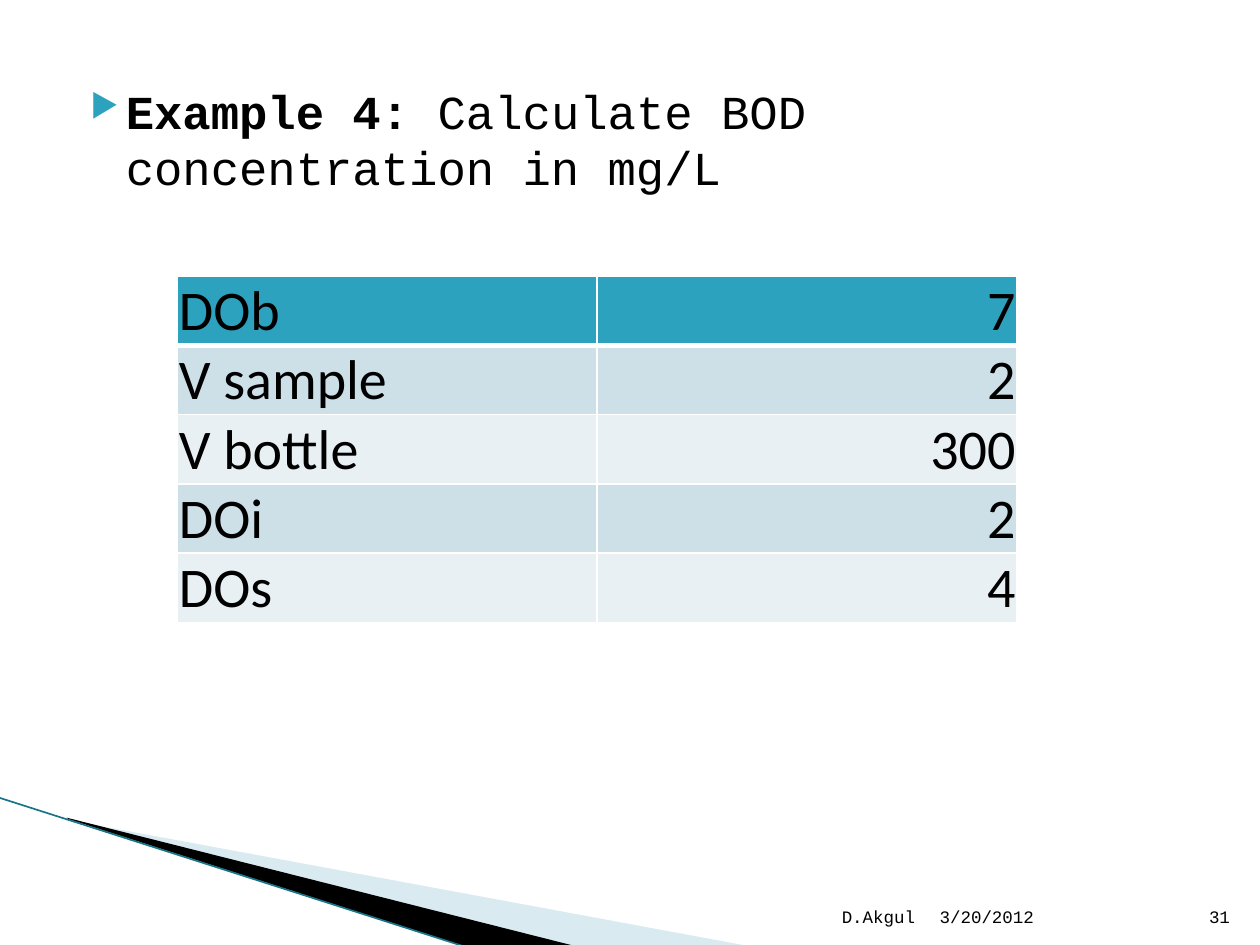
from dataclasses import dataclass

from lxml.etree import SubElement
from pptx import Presentation
from pptx.dml.color import RGBColor as Rgb
from pptx.enum.shapes import MSO_CONNECTOR as Connector
from pptx.enum.text import MSO_ANCHOR as Anchor, PP_ALIGN as Align
from pptx.oxml.ns import qn
from pptx.slide import Slide
from pptx.table import _Cell as Cell
from pptx.text.text import _Paragraph as Paragraph
from pptx.util import Inches, Pt


@dataclass(frozen=True)
class Theme:
    ink: str = "000000"
    paper: str = "FFFFFF"
    accent: str = "2DA2BF"
    edge: str = "1A7488"
    pale: str = "A0CBDC"
    bands: tuple[str, str] = ("CDE0E8", "E8F0F4")
    mono: str = "Courier New"
    sans: str = "Calibri"
    heading_size: float = 27
    table_size: float = 32
    footer_size: float = 10


@dataclass(frozen=True)
class Wedge:
    points: tuple[tuple[float, float], ...]
    color: str
    opacity: int = 100


@dataclass(frozen=True)
class FooterItem:
    text: str
    left: float
    width: float
    align: Align


THEME = Theme()

WEDGES = (
    Wedge(((0.55, 6.51), (5.95, 7.51), (4.56, 7.51), (0.55, 6.5)), THEME.pale, 40),
    Wedge(((0.53, 6.49), (4.57, 7.51), (3.72, 7.52), (0.54, 6.5)), THEME.ink),
)

FOOTER = (
    FooterItem("3/20/2012", 7.36, 2.1, Align.LEFT),
    FooterItem("D.Akgul", 4.79, 2.57, Align.RIGHT),
    FooterItem("31", 9.46, 0.4, Align.RIGHT),
)

MEASUREMENTS = (
    ("DOb", "7"),
    ("V sample", "2"),
    ("V bottle", "300"),
    ("DOi", "2"),
    ("DOs", "4"),
)


def set_font(paragraph: Paragraph, family: str, size: float) -> None:
    paragraph.font.name = family
    paragraph.font.size = Pt(size)
    paragraph.font.color.rgb = Rgb.from_string(THEME.ink)


def draw_wedge(slide: Slide, wedge: Wedge) -> None:
    corners = [(Inches(x), Inches(y)) for x, y in wedge.points]
    builder = slide.shapes.build_freeform(*corners[0])
    builder.add_line_segments(corners[1:])
    shape = builder.convert_to_shape()
    shape.shadow.inherit = False
    shape.line.fill.background()
    shape.fill.solid()
    shape.fill.fore_color.rgb = Rgb.from_string(wedge.color)
    if wedge.opacity < 100:
        color = shape.fill._xPr.find(f"{qn('a:solidFill')}/{qn('a:srgbClr')}")
        SubElement(color, qn("a:alpha"), val=str(wedge.opacity * 1000))


def draw_edge(slide: Slide) -> None:
    edge = slide.shapes.add_connector(
        Connector.STRAIGHT, Inches(-0.01), Inches(6.33), Inches(3.71), Inches(7.52)
    )
    edge.line.color.rgb = Rgb.from_string(THEME.edge)
    edge.line.width = Pt(0.95)
    SubElement(edge._element.spPr, qn("a:effectLst"))


def add_bullet(paragraph: Paragraph) -> None:
    properties = paragraph._p.get_or_add_pPr()
    properties.set("marL", str(Inches(0.4)))
    properties.set("indent", str(Inches(-0.28)))
    color = SubElement(properties, qn("a:buClr"))
    SubElement(color, qn("a:srgbClr"), val=THEME.accent)
    SubElement(properties, qn("a:buSzPct"), val="68000")
    SubElement(properties, qn("a:buChar"), char="▶")


def draw_heading(slide: Slide) -> None:
    heading = slide.shapes.add_textbox(Inches(0.5), Inches(0.6), Inches(9), Inches(5.97))
    heading.text_frame.word_wrap = True
    paragraph = heading.text_frame.paragraphs[0]
    add_bullet(paragraph)
    set_font(paragraph, THEME.mono, THEME.heading_size)
    label = paragraph.add_run()
    label.text = "Example 4: "
    label.font.bold = True
    paragraph.add_run().text = "Calculate BOD concentration in mg/L"


def draw_footer_item(slide: Slide, item: FooterItem) -> None:
    box = slide.shapes.add_textbox(
        Inches(item.left), Inches(7.01), Inches(item.width), Inches(0.4)
    )
    box.text_frame.word_wrap = True
    box.text_frame.vertical_anchor = Anchor.BOTTOM
    paragraph = box.text_frame.paragraphs[0]
    paragraph.text = item.text
    paragraph.alignment = item.align
    set_font(paragraph, THEME.mono, THEME.footer_size)


def add_borders(cell: Cell, top: float, bottom: float) -> None:
    properties = cell._tc.get_or_add_tcPr()
    widths = {"a:lnL": 1, "a:lnR": 1, "a:lnT": top, "a:lnB": bottom}
    for side, width in widths.items():
        border = SubElement(properties, qn(side), w=str(Pt(width)))
        fill = SubElement(border, qn("a:solidFill"))
        SubElement(fill, qn("a:srgbClr"), val=THEME.paper)


def fill_cell(cell: Cell, text: str, row: int, align: Align) -> None:
    add_borders(cell, top=3 if row == 1 else 1, bottom=3 if row == 0 else 1)
    background = THEME.bands[(row - 1) % 2] if row else THEME.accent
    cell.fill.solid()
    cell.fill.fore_color.rgb = Rgb.from_string(background)
    cell.margin_left = cell.margin_right = cell.margin_top = Inches(0.01)
    cell.margin_bottom = 0
    cell.vertical_anchor = Anchor.BOTTOM
    paragraph = cell.text_frame.paragraphs[0]
    paragraph.text = text
    paragraph.alignment = align
    set_font(paragraph, THEME.sans, THEME.table_size)
    paragraph.font.bold = False


def draw_measurements(slide: Slide) -> None:
    row_height = 0.55
    table = slide.shapes.add_table(
        len(MEASUREMENTS), 2, Inches(1.41), Inches(2.19),
        Inches(6.66), Inches(row_height * len(MEASUREMENTS)),
    ).table
    for row, (quantity, value) in enumerate(MEASUREMENTS):
        fill_cell(table.cell(row, 0), quantity, row, Align.LEFT)
        fill_cell(table.cell(row, 1), value, row, Align.RIGHT)


def main() -> None:
    deck = Presentation()
    deck.slide_width, deck.slide_height = Inches(10), Inches(7.5)
    slide = deck.slides.add_slide(deck.slide_layouts[6])
    for wedge in WEDGES:
        draw_wedge(slide, wedge)
    draw_edge(slide)
    draw_heading(slide)
    for item in FOOTER:
        draw_footer_item(slide, item)
    draw_measurements(slide)
    deck.save("out.pptx")


if __name__ == "__main__":
    main()
